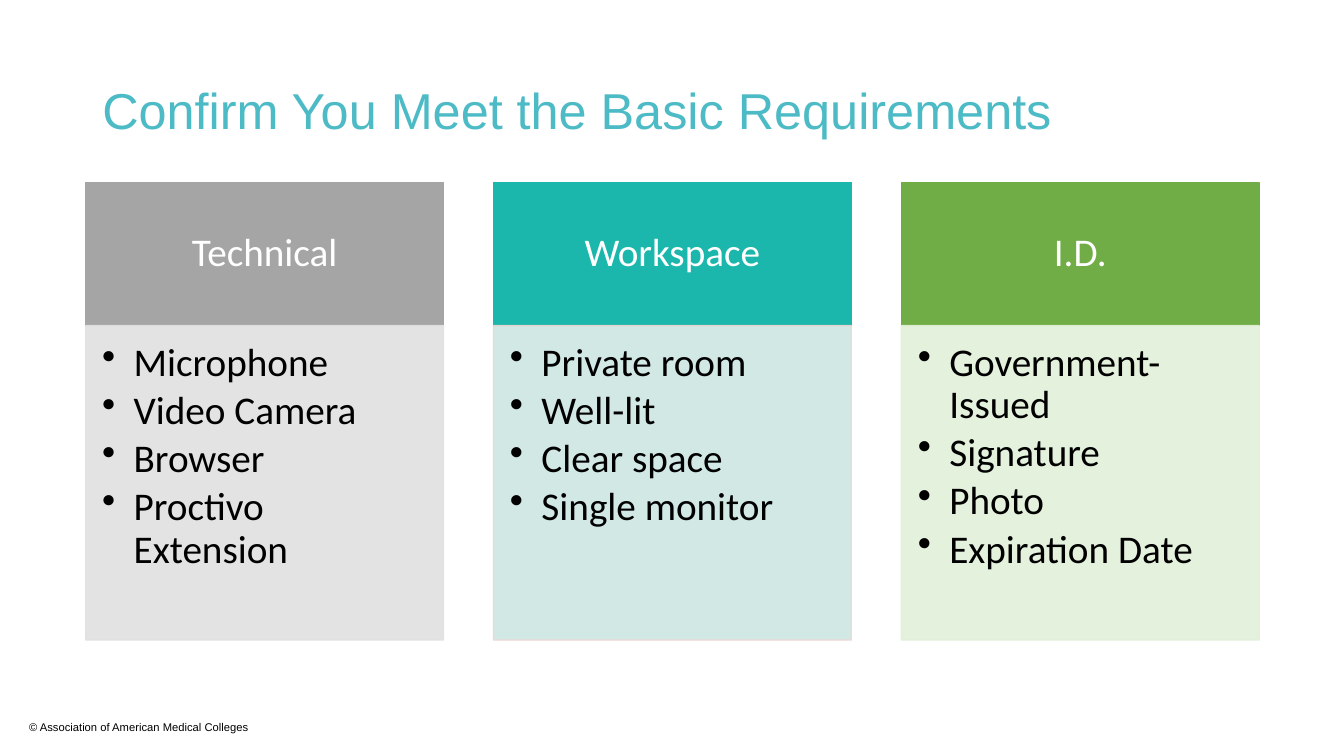
from lxml.etree import SubElement
from pptx import Presentation
from pptx.dml.color import RGBColor
from pptx.enum.shapes import MSO_SHAPE as Shape
from pptx.enum.text import MSO_ANCHOR as Anchor, PP_ALIGN as Align
from pptx.oxml.ns import qn
from pptx.util import Pt

COLORS = {
    "title": "4DBBC6", "black": "000000", "white": "FFFFFF",
    "gray": "A5A5A5", "pale gray": "E1E1E1",
    "teal": "1BB7AC", "pale teal": "CCE6E3", "pale pink": "F1D5D5",
    "green": "70AD47", "pale green": "E2F0D9",
}
# heading, header colour, body fill, body outline, requirements
REQUIREMENTS = [
    ("Technical", "gray", "pale gray", "pale gray",
     ["Microphone", "Video Camera", "Browser", "Proctivo Extension"]),
    ("Workspace", "teal", "pale teal", "pale pink",
     ["Private room", "Well-lit", "Clear space", "Single monitor"]),
    ("I.D.", "green", "pale green", "pale green",
     ["Government-Issued", "Signature", "Photo", "Expiration Date"]),
]
COLUMN_LEFT, COLUMN_STEP, COLUMN_WIDTH = 61.2, 291.3, 255.6
HEADER_TOP, HEADER_HEIGHT, BODY_HEIGHT = 130.3, 102.3, 224.6
BULLET_INDENT = 22.5


def rgb(name):
    return RGBColor.from_string(COLORS[name])


def add_bullet(paragraph):
    properties = paragraph._p.get_or_add_pPr()
    properties.set("marL", str(Pt(BULLET_INDENT)))
    properties.set("indent", str(-Pt(BULLET_INDENT)))
    SubElement(properties, qn("a:buChar"), char="•")


def write(shape, lines, size, color, font="Calibri", align=Align.LEFT,
          anchor=Anchor.TOP, insets=(7.2, 3.6, 7.2, 3.6), spacing=0.9,
          after=0, bullets=False):
    """Fill a shape with one paragraph per line; insets run left, top, right, bottom."""
    frame = shape.text_frame
    frame.word_wrap = True
    frame.vertical_anchor = anchor
    (frame.margin_left, frame.margin_top,
     frame.margin_right, frame.margin_bottom) = map(Pt, insets)
    for index, line in enumerate(lines):
        paragraph = frame.add_paragraph() if index else frame.paragraphs[0]
        paragraph.alignment = align
        paragraph.line_spacing = spacing
        paragraph.space_after = Pt(after)
        if bullets:
            add_bullet(paragraph)
        run = paragraph.add_run()
        run.text = line
        run.font.name, run.font.size = font, Pt(size)
        run.font.color.rgb = rgb(color)


def add_label(slide, left, top, width, height, text, **text_format):
    label = slide.shapes.add_textbox(Pt(left), Pt(top), Pt(width), Pt(height))
    write(label, [text], font="Arial", **text_format)


def add_panel(slide, left, top, height, fill, outline, opacity=100):
    panel = slide.shapes.add_shape(
        Shape.RECTANGLE, Pt(left), Pt(top), Pt(COLUMN_WIDTH), Pt(height))
    panel.shadow.inherit = False
    panel.fill.solid()
    panel.fill.fore_color.rgb = rgb(fill)
    panel.line.color.rgb = rgb(outline)
    panel.line.width = Pt(1)
    if opacity < 100:
        for color in panel._element.spPr.iter(qn("a:srgbClr")):
            SubElement(color, qn("a:alpha"), val=str(opacity * 1000))
    return panel


def add_column(slide, left, heading, header_color, body_fill, body_outline, items):
    header = add_panel(slide, left, HEADER_TOP, HEADER_HEIGHT,
                       header_color, header_color)
    write(header, [heading], 28, "white", align=Align.CENTER,
          anchor=Anchor.MIDDLE, insets=(15.7, 9, 15.7, 9), after=9.8)
    body = add_panel(slide, left, HEADER_TOP + HEADER_HEIGHT, BODY_HEIGHT,
                     body_fill, body_outline, opacity=90)
    write(body, items, 28, "black", insets=(11.8, 11.8, 15.7, 17.6),
          after=4.2, bullets=True)


def main():
    deck = Presentation()
    deck.slide_width, deck.slide_height = Pt(960), Pt(540)
    slide = deck.slides.add_slide(deck.slide_layouts[6])
    add_label(slide, 13.7, 511.2, 386.6, 17,
              "© Association of American Medical Colleges",
              size=8, color="black", spacing=1)
    add_label(slide, 66, 28.8, 828, 104.4,
              "Confirm You Meet the Basic Requirements",
              size=36, color="title", anchor=Anchor.MIDDLE)
    for index, requirement in enumerate(REQUIREMENTS):
        add_column(slide, COLUMN_LEFT + index * COLUMN_STEP, *requirement)
    deck.save("out.pptx")


if __name__ == "__main__":
    main()
